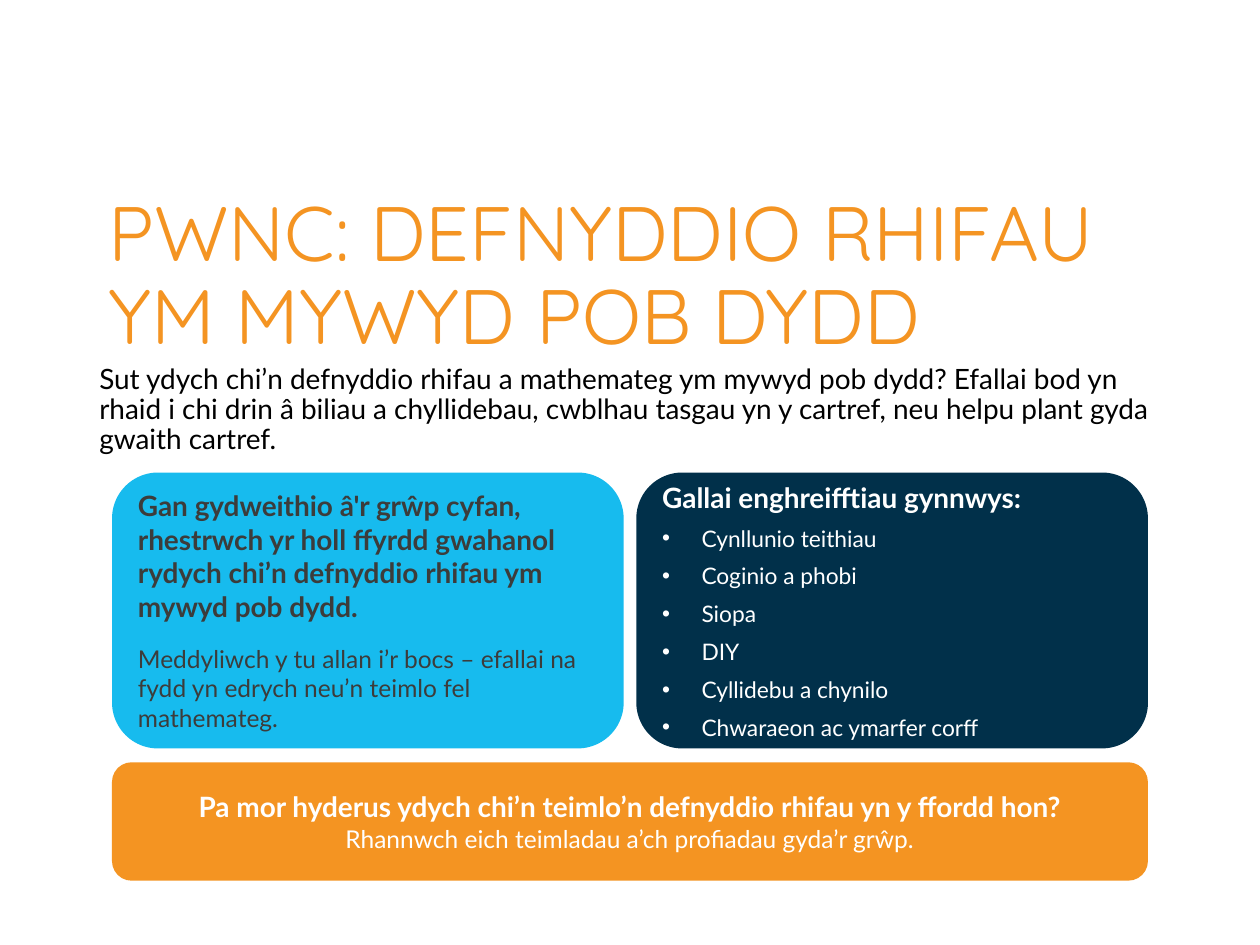
"""Build a Welsh discussion slide about using numbers in everyday life."""
from dataclasses import dataclass
from typing import Any

import pptx
import pptx.dml.color
import pptx.enum.shapes
import pptx.enum.text
import pptx.oxml.ns
import pptx.util
from lxml import etree

Pt = pptx.util.Pt
RGBColor = pptx.dml.color.RGBColor
ALIGN = pptx.enum.text.PP_ALIGN
ANCHOR = pptx.enum.text.MSO_ANCHOR

ORANGE = RGBColor(0xF4, 0x94, 0x22)
SKY = RGBColor(0x17, 0xBB, 0xEE)
NAVY = RGBColor(0x01, 0x30, 0x4A)
CHARCOAL = RGBColor(0x3C, 0x3C, 0x3B)
BLACK = RGBColor(0, 0, 0)
WHITE = RGBColor(0xFF, 0xFF, 0xFF)

LEFT, WIDTH, GAP = 64, 592, 7.2
CARD_WIDTH = (WIDTH - GAP) / 2
CARD_TOP, CARD_HEIGHT = 270, 157.7
BULLET_INDENT = 22.5


@dataclass(frozen=True)
class Line:
    """One paragraph of text with its weight and size."""
    text: str
    size: float
    bold: bool = False
    bullet: bool = False


@dataclass(frozen=True)
class Block:
    """A text area, drawn as a rounded card when it has a fill."""
    left: float
    top: float
    width: float
    height: float
    lines: tuple[Line, ...]
    color: RGBColor
    format: dict[str, Any]
    fill: RGBColor | None = None
    font: str = "Lato"
    anchor: ANCHOR = ANCHOR.MIDDLE


EXAMPLES = (
    "Cynllunio teithiau",
    "Coginio a phobi",
    "Siopa",
    "DIY",
    "Cyllidebu a chynilo",
    "Chwaraeon ac ymarfer corff",
)

BLOCKS = (
    Block(54.7, 124.6, 612, 68.4,
          (Line("PWNC: DEFNYDDIO RHIFAU YM MYWYD POB DYDD", 44),),
          ORANGE, {"alignment": ALIGN.LEFT, "line_spacing": 0.9},
          font="Quicksand"),
    Block(49.7, 205.2, 620.6, 52.6,
          (Line("Sut ydych chi’n defnyddio rhifau a mathemateg ym mywyd pob dydd? "
                "Efallai bod yn rhaid i chi drin â biliau a chyllidebau, cwblhau "
                "tasgau yn y cartref, neu helpu plant gyda gwaith cartref.", 16),),
          BLACK, {"alignment": ALIGN.LEFT, "line_spacing": 0.9},
          anchor=ANCHOR.TOP),
    Block(LEFT, 435.6, WIDTH, 67.7,
          (Line("Pa mor hyderus ydych chi’n teimlo’n defnyddio rhifau yn y "
                "ffordd hon?", 16, bold=True),
           Line("Rhannwch eich teimladau a’ch profiadau gyda’r grŵp.", 14)),
          WHITE, {"alignment": ALIGN.CENTER}, ORANGE),
    Block(LEFT, CARD_TOP, CARD_WIDTH, CARD_HEIGHT,
          (Line("Gan gydweithio â'r grŵp cyfan, rhestrwch yr holl ffyrdd gwahanol "
                "rydych chi’n defnyddio rhifau ym mywyd pob dydd.", 16, bold=True),
           Line("Meddyliwch y tu allan i’r bocs – efallai na fydd yn edrych "
                "neu’n teimlo fel mathemateg.", 14)),
          CHARCOAL, {"alignment": ALIGN.LEFT, "space_after": Pt(12)}, SKY),
    Block(LEFT + CARD_WIDTH + GAP, CARD_TOP, CARD_WIDTH, CARD_HEIGHT,
          (Line("Gallai enghreifftiau gynnwys:", 16, bold=True),
           *(Line(example, 13, bullet=True) for example in EXAMPLES)),
          WHITE, {"alignment": ALIGN.LEFT, "space_after": Pt(6)}, NAVY),
)


def set_all(target: Any, values: dict[str, Any]) -> None:
    """Set each named attribute on the target."""
    for name, value in values.items():
        setattr(target, name, value)


def add_bullet(para: Any) -> None:
    """Give the paragraph a hanging round bullet."""
    properties = para._p.get_or_add_pPr()
    properties.set("marL", str(Pt(BULLET_INDENT)))
    properties.set("indent", str(-Pt(BULLET_INDENT)))
    qn = pptx.oxml.ns.qn
    etree.SubElement(properties, qn("a:buFont"), typeface="Arial")
    etree.SubElement(properties, qn("a:buChar"), char="•")


def draw_block(page: Any, block: Block) -> None:
    """Draw the block and its paragraphs."""
    bounds = [Pt(n) for n in (block.left, block.top, block.width, block.height)]
    if block.fill is None:
        box = page.shapes.add_textbox(*bounds)
    else:
        box = page.shapes.add_shape(
            pptx.enum.shapes.MSO_SHAPE.ROUNDED_RECTANGLE, *bounds)
        box.shadow.inherit = False
        box.fill.solid()
        box.fill.fore_color.rgb = block.fill
        box.line.fill.background()
    frame = box.text_frame
    set_all(frame, {"word_wrap": True, "vertical_anchor": block.anchor})
    for index, line in enumerate(block.lines):
        para = frame.add_paragraph() if index else frame.paragraphs[0]
        set_all(para, block.format)
        if line.bullet:
            add_bullet(para)
        span = para.add_run()
        span.text = line.text
        set_all(span.font, {"name": block.font, "size": Pt(line.size),
                            "bold": line.bold})
        span.font.color.rgb = block.color


def main() -> None:
    """Create and save the deck."""
    deck = pptx.Presentation()
    set_all(deck, {"slide_width": Pt(720), "slide_height": Pt(540)})
    page = deck.slides.add_slide(deck.slide_layouts[6])
    for block in BLOCKS:
        draw_block(page, block)
    deck.save("out.pptx")


if __name__ == "__main__":
    main()
